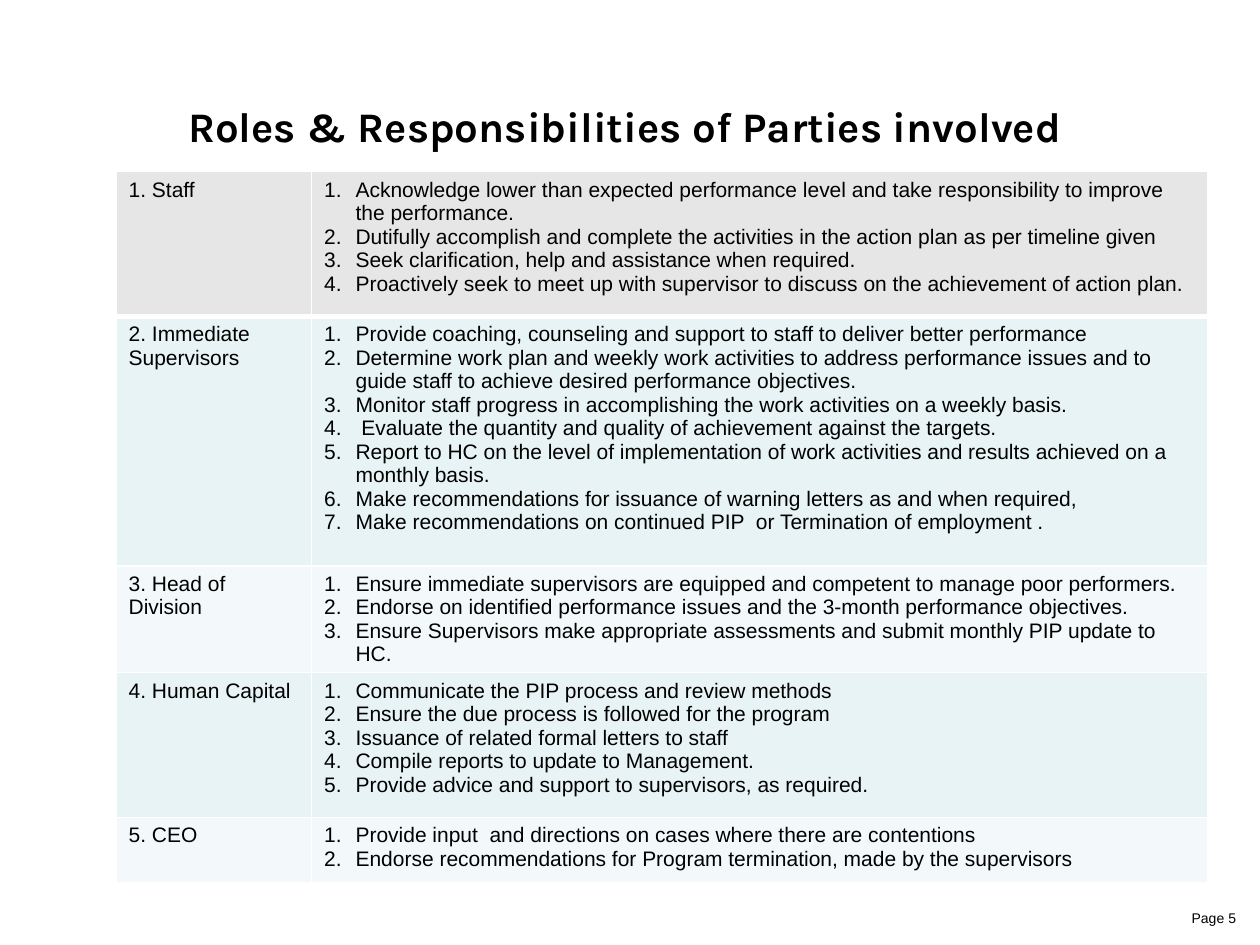
from pptx import Presentation
from pptx import util as u
from pptx.dml.color import RGBColor
from pptx.enum import text
from pptx.oxml import parse_xml
from pptx.oxml.ns import nsdecls

BLACK, WHITE = "000000", "FFFFFF"
GREY, TEAL, PALE = "E6E6E6", "E7F3F4", "F3F9FA"
COLS = [3.94, 18.06]
HANG = u.Cm(0.635)

# party, row height in cm, fill, duties
ROLES = [
    ("1. Staff", 2.92, GREY, [
        "Acknowledge lower than expected performance level and take responsibility to improve the performance.",
        "Dutifully accomplish and complete the activities in the action plan as per timeline given",
        "Seek clarification, help and assistance when required.",
        "Proactively seek to meet up with supervisor to discuss on the achievement of action plan."]),
    ("2. Immediate Supervisors", 5.03, TEAL, [
        "Provide coaching, counseling and support to staff to deliver better performance",
        "Determine work plan and weekly work activities to address performance issues and to guide staff to achieve desired performance objectives.",
        "Monitor staff progress in accomplishing the work activities on a weekly basis.",
        " Evaluate the quantity and quality of achievement against the targets.",
        "Report to HC on the level of implementation of work activities and results achieved on a monthly basis.",
        "Make recommendations for issuance of warning letters as and when required,",
        "Make recommendations on continued PIP  or Termination of employment ."]),
    ("3. Head of Division", 1.96, PALE, [
        "Ensure immediate supervisors are equipped and competent to manage poor performers.",
        "Endorse on identified performance issues and the 3-month performance objectives.",
        "Ensure Supervisors make appropriate assessments and submit monthly PIP update to HC."]),
    ("4. Human Capital", 2.92, TEAL, [
        "Communicate the PIP process and review methods",
        "Ensure the due process is followed for the program",
        "Issuance of related formal letters to staff",
        "Compile reports to update to Management.",
        "Provide advice and support to supervisors, as required."]),
    ("5. CEO", 1.32, PALE, [
        "Provide input  and directions on cases where there are contentions",
        "Endorse recommendations for Program termination, made by the supervisors"]),
]


def color(code):
    return RGBColor.from_string(code)


def style(para, size, face="Arial", bold=False):
    font = para.font
    font.name, font.size, font.bold = face, u.Pt(size), bold
    font.color.rgb = color(BLACK)


def place(shape, left, top, width, height):
    shape.left, shape.top = u.Cm(left), u.Cm(top)
    shape.width, shape.height = u.Cm(width), u.Cm(height)


def number(para):
    """Give the paragraph a hanging automatic number."""
    props = para._p.get_or_add_pPr()
    props.set("marL", str(HANG))
    props.set("indent", str(-HANG))
    props.append(parse_xml(
        f'<a:buFont {nsdecls("a")} typeface="+mj-lt"/>'))
    props.append(parse_xml(
        f'<a:buAutoNum {nsdecls("a")} type="arabicPeriod"/>'))


def border(cell, top, bottom):
    """Draw white cell edges; top and bottom are widths in points."""
    props = cell._tc.get_or_add_tcPr()
    for side, width in zip("LRTB", (1, 1, top, bottom)):
        props.append(parse_xml(
            f'<a:ln{side} {nsdecls("a")} w="{u.Pt(width)}"><a:solidFill>'
            f'<a:srgbClr val="{WHITE}"/></a:solidFill></a:ln{side}>'))


def fill_cell(cell, lines, fill, numbered):
    cell.fill.solid()
    cell.fill.fore_color.rgb = color(fill)
    frame = cell.text_frame
    frame.text = "\n".join(lines)
    for para in frame.paragraphs:
        if numbered:
            number(para)
        style(para, 12)


def add_title(slide, words):
    title = slide.shapes.title
    place(title, 1.27, 1.27, 22.86, 2.54)
    frame = title.text_frame
    frame.text = words
    frame.vertical_anchor = text.MSO_ANCHOR.MIDDLE
    para = frame.paragraphs[0]
    para.alignment = text.PP_ALIGN.CENTER
    style(para, 24, "Karla", True)


def add_roles(slide):
    high = sum(role[1] for role in ROLES)
    table = slide.shapes.add_table(
        len(ROLES), len(COLS), u.Cm(2.34), u.Cm(3.46),
        u.Cm(sum(COLS)), u.Cm(high)).table
    for col, width in zip(table.columns, COLS):
        col.width = u.Cm(width)
    for row, (party, height, fill, duties) in enumerate(ROLES):
        table.rows[row].height = u.Cm(height)
        for col, lines in enumerate(([party], duties)):
            cell = table.cell(row, col)
            border(cell, 3 if row == 1 else 1, 3 if row == 0 else 1)
            fill_cell(cell, lines, fill, col == 1)


def add_page(slide, words):
    box = slide.shapes.add_textbox(
        u.Cm(19.25), u.Cm(18.21), u.Cm(5.92), u.Cm(1.32))
    frame = box.text_frame
    frame.word_wrap = True
    frame.text = words
    para = frame.paragraphs[0]
    para.alignment = text.PP_ALIGN.RIGHT
    style(para, 8)


def main():
    deck = Presentation()
    deck.slide_width, deck.slide_height = u.Cm(25.4), u.Cm(19.05)
    slide = deck.slides.add_slide(deck.slide_layouts[5])
    add_title(slide, "Roles & Responsibilities of Parties involved ")
    add_roles(slide)
    add_page(slide, "Page 5")
    deck.save("out.pptx")


if __name__ == "__main__":
    main()
